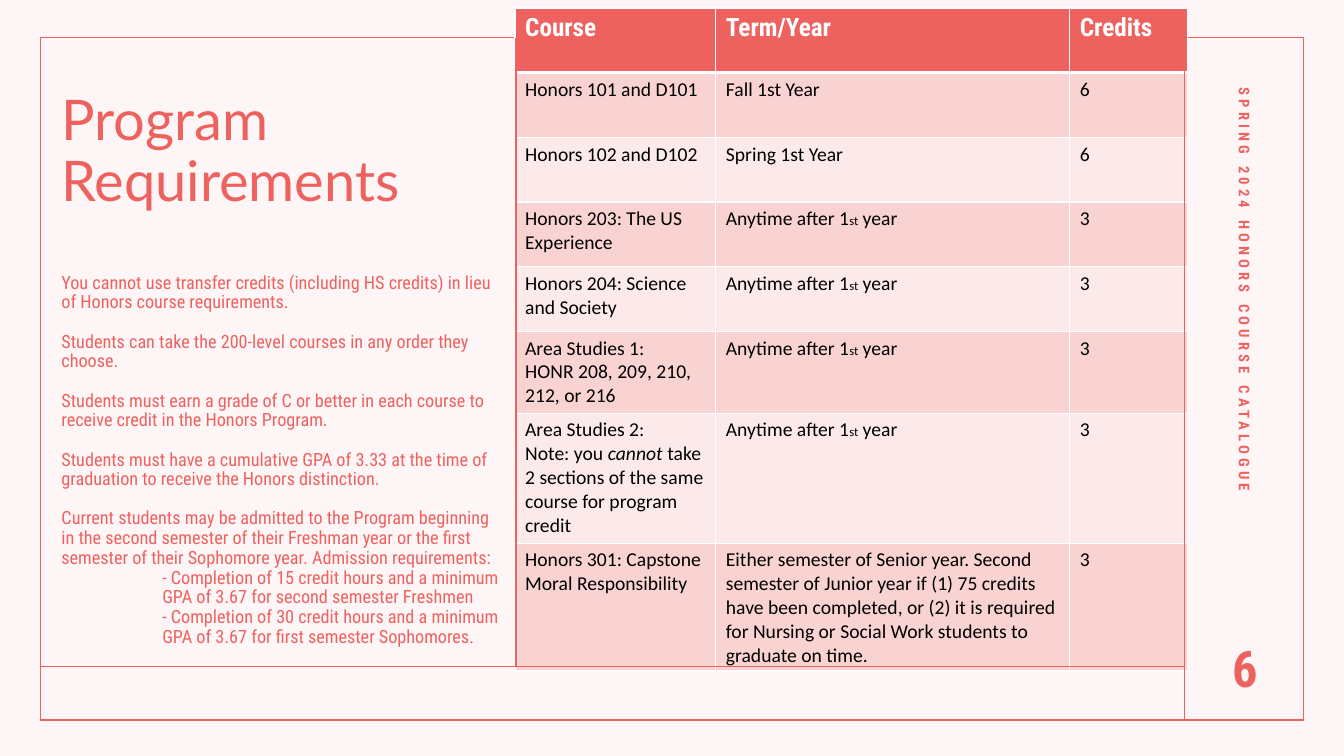
from lxml.etree import SubElement
from pptx import Presentation
from pptx.dml.color import RGBColor
from pptx.enum.shapes import MSO_CONNECTOR, MSO_SHAPE
from pptx.enum.text import MSO_ANCHOR, PP_ALIGN
from pptx.oxml.ns import qn
from pptx.util import Cm, Pt

CORAL = RGBColor(0xED, 0x62, 0x5F)
ROSE = RGBColor(0xF8, 0xD3, 0xD2)
BLUSH = RGBColor(0xFC, 0xEA, 0xEA)
WHITE = RGBColor(0xFF, 0xFF, 0xFF)
BLACK = RGBColor(0x00, 0x00, 0x00)
CONDENSED = "Roboto Condensed"
SLIDE_WIDTH, SLIDE_HEIGHT = Cm(33.87), Cm(19.05)

RULES = [
    "You cannot use transfer credits (including HS credits) in lieu of Honors course requirements.",
    "Students can take the 200-level courses in any order they choose.",
    "Students must earn a grade of C or better in each course to receive credit in the Honors Program.",
    "Students must have a cumulative GPA of 3.33 at the time of graduation to receive the Honors distinction.",
    "Current students may be admitted to the Program beginning in the second semester of their Freshman "
    "year or the first semester of their Sophomore year. Admission requirements:",
]
ADMISSION = [
    "- Completion of 15 credit hours and a minimum GPA of 3.67 for second semester Freshmen",
    "- Completion of 30 credit hours and a minimum GPA of 3.67 for first semester Sophomores.",
]
AFTER_FIRST = "Anytime after 1|st| year"
COURSES = [
    ("Course", "Term/Year", "Credits"),
    ("Honors 101 and D101", "Fall 1st Year", "6"),
    ("Honors 102 and D102", "Spring 1st Year", "6"),
    ("Honors 203: The US Experience", AFTER_FIRST, "3"),
    ("Honors 204: Science and Society", AFTER_FIRST, "3"),
    ("Area Studies 1:\nHONR 208, 209, 210, 212, or 216", AFTER_FIRST, "3"),
    ("Area Studies 2:\nNote: you |cannot| take 2 sections of the same course for program credit",
     AFTER_FIRST, "3"),
    ("Honors 301: Capstone\nMoral Responsibility",
     "Either semester of Senior year. Second semester of Junior year if (1) 75 credits have been "
     "completed, or (2) it is required for Nursing or Social Work students to graduate on time.", "3"),
]
COLUMN_WIDTHS = [5.06, 8.92, 2.97]
ROW_HEIGHTS = [1.63] * 5 + [2.06, 3.28, 3.2]


def set_font(paragraph, name, size, color, bold=False):
    """Set the font that all runs of a paragraph share."""
    font = paragraph.font
    font.name, font.size, font.bold = name, Pt(size), bold
    font.color.rgb = color


def add_panel(slide, left, top, width, height, fill=None, opacity=100, outline=None):
    """Add a rectangle with an optional fill and outline."""
    panel = slide.shapes.add_shape(MSO_SHAPE.RECTANGLE, left, top, width, height)
    panel.shadow.inherit = False
    if fill is None:
        panel.fill.background()
    else:
        panel.fill.solid()
        panel.fill.fore_color.rgb = fill
        if opacity < 100:
            color = panel._element.spPr.find(".//" + qn("a:srgbClr"))
            SubElement(color, qn("a:alpha")).set("val", str(opacity * 1000))
    if outline is None:
        panel.line.fill.background()
    else:
        panel.line.color.rgb = outline
        panel.line.width = Pt(1)


def add_rule(slide, x1, y1, x2, y2):
    """Add a thin coral line."""
    rule = slide.shapes.add_connector(MSO_CONNECTOR.STRAIGHT, Cm(x1), Cm(y1), Cm(x2), Cm(y2))
    rule.line.color.rgb = CORAL
    rule.line.width = Pt(1)
    SubElement(rule._element.spPr, qn("a:effectLst"))


def add_text_frame(slide, left, top, width, height, anchor, rotation=0):
    """Add a wrapping text box and return its text frame."""
    box = slide.shapes.add_textbox(Cm(left), Cm(top), Cm(width), Cm(height))
    box.rotation = rotation
    frame = box.text_frame
    frame.word_wrap = True
    frame.vertical_anchor = anchor
    return frame


def add_requirements(slide):
    """Add the heading with the program rules below it."""
    frame = add_text_frame(slide, 1.3, -0.33, 11.53, 16.76, MSO_ANCHOR.BOTTOM)
    heading = frame.paragraphs[0]
    heading.text = "Program Requirements"
    heading.line_spacing = 0.9
    heading.space_after = Pt(43)
    set_font(heading, "Lato", 40, CORAL)
    for text in RULES + ADMISSION:
        paragraph = frame.add_paragraph()
        paragraph.text = text
        paragraph.line_spacing = 0.9
        paragraph.space_after = Pt(14 if text in RULES[:-1] else 0)
        set_font(paragraph, CONDENSED, 13, CORAL)
        if text in ADMISSION:
            paragraph._p.get_or_add_pPr().set("marL", str(Cm(2.54)))


def add_label(slide, text, size, place, align=PP_ALIGN.LEFT, rotation=0, tracking=0):
    """Add a bold coral label in the side strip."""
    frame = add_text_frame(slide, *place, MSO_ANCHOR.MIDDLE, rotation)
    label = frame.paragraphs[0]
    label.text = text
    label.alignment = align
    label.space_after = Pt(6)
    set_font(label, CONDENSED, size, CORAL, bold=True)
    if tracking:
        label.runs[0]._r.get_or_add_rPr().set("spc", str(tracking * 100))


def set_borders(cell, bottom):
    """Draw white borders around a table cell."""
    properties = cell._tc.get_or_add_tcPr()
    for side, width in (("L", 1), ("R", 1), ("T", 1), ("B", bottom)):
        border = SubElement(properties, qn("a:ln" + side), w=str(Pt(width)))
        fill = SubElement(border, qn("a:solidFill"))
        SubElement(fill, qn("a:srgbClr"), val=str(WHITE))


def fill_cell(cell, text, fill, font):
    """Write a cell, with bars around its small or italic words."""
    cell.fill.solid()
    cell.fill.fore_color.rgb = fill
    cell.text = text.replace("|", "") if "|" not in text else ""
    frame = cell.text_frame
    if "|" in text:
        for index, line in enumerate(text.split("\n")):
            paragraph = frame.add_paragraph() if index else frame.paragraphs[0]
            for piece in line.split("|"):
                run = paragraph.add_run()
                run.text = piece
                if piece == "st":
                    run.font.size = Pt(9)
                elif piece == "cannot":
                    run.font.italic = True
    for paragraph in frame.paragraphs:
        set_font(paragraph, *font)


def add_courses(slide):
    """Add the table of courses, terms and credits."""
    table = slide.shapes.add_table(
        len(COURSES), len(COLUMN_WIDTHS), Cm(12.98), Cm(0.2),
        Cm(sum(COLUMN_WIDTHS)), Cm(sum(ROW_HEIGHTS))).table
    for column, width in zip(table.columns, COLUMN_WIDTHS):
        column.width = Cm(width)
    for index, (row, height, texts) in enumerate(zip(table.rows, ROW_HEIGHTS, COURSES)):
        row.height = Cm(height)
        if index == 0:
            fill, font, bottom = CORAL, (CONDENSED, 18, WHITE, True), 3
        else:
            fill, font, bottom = (ROSE if index % 2 else BLUSH), ("Calibri", 14, BLACK), 1
        for cell, text in zip(row.cells, texts):
            set_borders(cell, bottom)
            fill_cell(cell, text, fill, font)


def main():
    """Build the slide and save it."""
    presentation = Presentation()
    presentation.slide_width, presentation.slide_height = SLIDE_WIDTH, SLIDE_HEIGHT
    slide = presentation.slides.add_slide(presentation.slide_layouts[6])
    add_panel(slide, 0, 0, SLIDE_WIDTH, SLIDE_HEIGHT, WHITE)
    add_panel(slide, 0, 0, SLIDE_WIDTH, SLIDE_HEIGHT, CORAL, opacity=5)
    add_panel(slide, Cm(1.02), Cm(0.94), Cm(31.83), Cm(17.2), outline=CORAL)
    add_requirements(slide)
    add_courses(slide)
    add_rule(slide, 29.85, 0.94, 29.85, 18.11)
    add_label(slide, "SPRING 2024 HONORS COURSE CATALOGUE", 10.5,
              (25.65, 7.16, 11.43, 1.02), rotation=90, tracking=3)
    add_rule(slide, 1.04, 16.79, 29.85, 16.79)
    add_rule(slide, 13, 0.97, 13, 16.79)
    add_label(slide, "6", 36, (30.05, 15.75, 2.64, 2.11), PP_ALIGN.CENTER)
    presentation.save("out.pptx")


if __name__ == "__main__":
    main()
